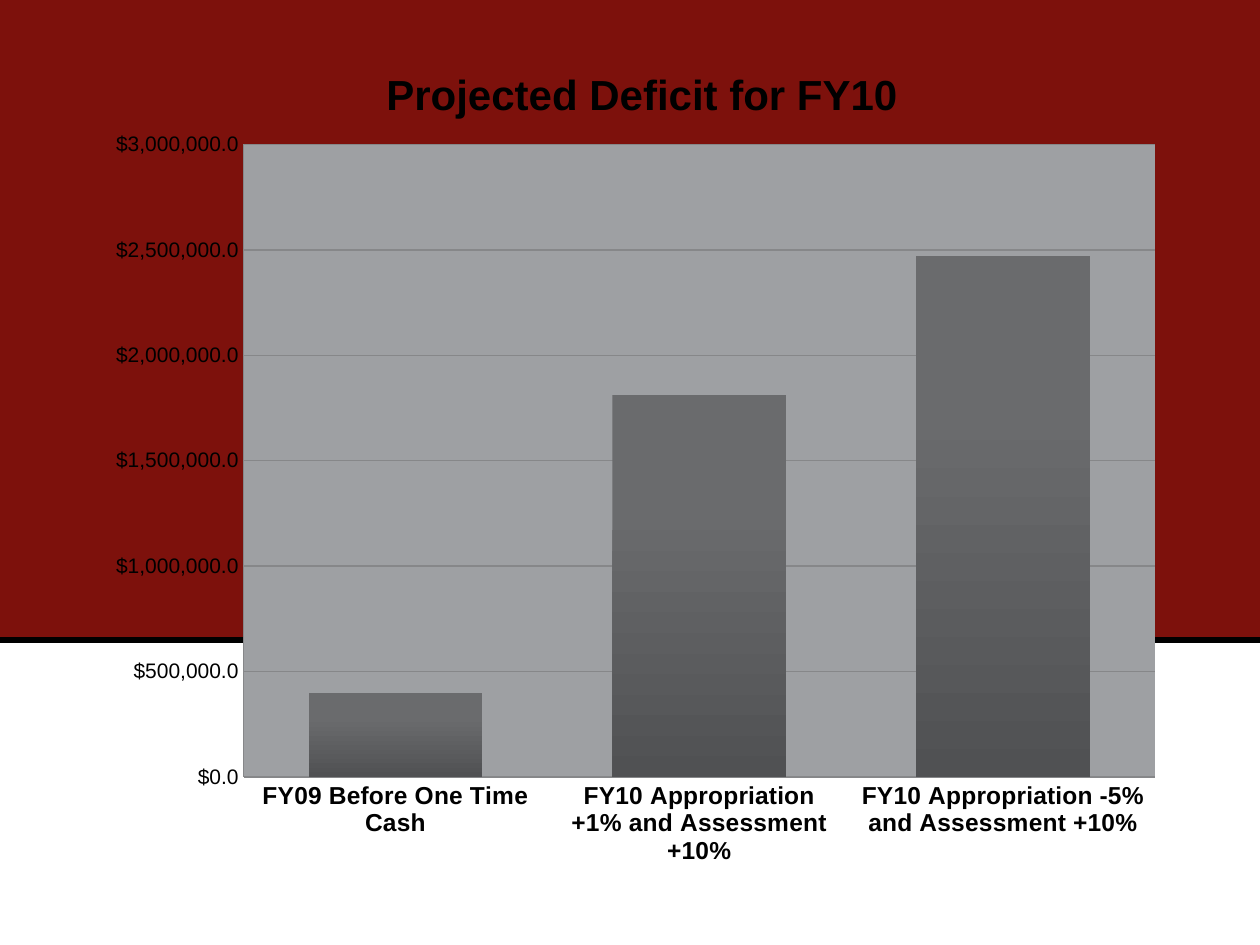
from lxml import etree
from pptx import Presentation, util as u
from pptx.chart.data import CategoryChartData
from pptx.dml.color import RGBColor
from pptx.enum import chart as ch, shapes
from pptx.oxml import parse_xml
from pptx.oxml.ns import nsdecls, qn

RED = RGBColor(0x7D, 0x11, 0x0C)
BLACK = RGBColor(0, 0, 0)
PLOT = RGBColor(0x9E, 0xA0, 0xA3)
GRID = RGBColor(0x86, 0x87, 0x89)
LIGHT = RGBColor(0x6A, 0x6B, 0x6D)
DARK = RGBColor(0x50, 0x51, 0x53)
FONT = "Arial"


def place(node, at, index, inner=False):
    """Give a chart part a fixed layout, as shares of the chart."""
    for old in node.findall(qn("c:layout")):
        node.remove(old)
    tags = [("layoutTarget", "inner")] if inner else []
    tags += [("xMode", "edge"), ("yMode", "edge"), *zip("xywh", at)]
    body = "".join(f'<c:{tag} val="{val}"/>' for tag, val in tags)
    node.insert(index, parse_xml(
        f'<c:layout {nsdecls("c")}><c:manualLayout>{body}</c:manualLayout></c:layout>'))


class Deck:
    def __init__(self, wide, high):
        self.prs = Presentation()
        self.prs.slide_width, self.prs.slide_height = u.Inches(wide), u.Inches(high)
        self.slide = self.prs.slides.add_slide(self.prs.slide_layouts[6])

    def span(self, x, y, w, h):
        """Turn shares of the slide into lengths."""
        wide, high = self.prs.slide_width, self.prs.slide_height
        return [round(v) for v in (x * wide, y * high, w * wide, h * high)]

    def style(self, font, size, bold=False):
        font.name, font.size, font.bold = FONT, u.Pt(size), bold
        font.color.rgb = BLACK

    def band(self, at, color):
        box = self.slide.shapes.add_shape(shapes.MSO_SHAPE.RECTANGLE, *self.span(*at))
        box.shadow.inherit = False
        box.fill.solid()
        box.fill.fore_color.rgb = color
        box.line.fill.background()

    def rule(self, y, color, width):
        x, top, w, _ = self.span(0, y, 1, 0)
        line = self.slide.shapes.add_connector(
            shapes.MSO_CONNECTOR.STRAIGHT, x, top, x + w, top)
        line.line.color.rgb, line.line.width = color, u.Pt(width)
        etree.SubElement(line._element.spPr, qn("a:effectLst"))

    def bars(self, at, title, rows):
        data = CategoryChartData(number_format='"$"#,##0.0')
        data.categories = list(rows)
        data.add_series("Series 1", rows.values())
        chart = self.slide.shapes.add_chart(
            ch.XL_CHART_TYPE.COLUMN_CLUSTERED, *self.span(*at), data).chart
        self.style(chart.font, 10)
        chart.has_legend = False
        self.head(chart, title)
        self.axes(chart)
        plot = chart.plots[0]
        plot.gap_width, plot.overlap, plot.vary_by_categories = 75, -25, False
        self.shade(plot.series[0].format.fill)
        area = chart._chartSpace.chart.plotArea
        place(area, (0.138, 0.143, 0.843, 0.735), 0, inner=True)
        area.append(parse_xml(
            f'<c:spPr {nsdecls("c", "a")}><a:solidFill><a:srgbClr val="{PLOT}"/>'
            '</a:solidFill><a:ln><a:noFill/></a:ln></c:spPr>'))

    def head(self, chart, title):
        chart.has_title = True
        run = chart.chart_title.text_frame.paragraphs[0].add_run()
        run.text = title
        self.style(run.font, 24, True)
        place(chart.chart_title._element, (0.263, 0.045), 1)

    def axes(self, chart):
        for axis, size, bold in ((chart.category_axis, 14, True),
                                 (chart.value_axis, 12, False)):
            axis.major_tick_mark = axis.minor_tick_mark = ch.XL_TICK_MARK.NONE
            self.style(axis.tick_labels.font, size, bold)
            axis.format.line.color.rgb = GRID
        axis = chart.value_axis
        axis.minimum_scale, axis.maximum_scale, axis.major_unit = 0, 3000000, 500000
        axis.tick_labels.number_format = '"$"#,##0.0'
        axis.tick_labels.number_format_is_linked = False
        axis.has_major_gridlines = True
        axis.major_gridlines.format.line.color.rgb = GRID

    def shade(self, fill):
        fill.gradient()
        fill.gradient_angle = 270
        for stop, color, spot in zip(fill.gradient_stops, (LIGHT, DARK), (0.3, 1)):
            stop.color.rgb, stop.position = color, spot


def main():
    deck = Deck(10, 7.5)
    split = 5.08 / 7.5
    deck.band((0, 0, 1, split), RED)
    deck.rule(split, BLACK, 3.75)
    deck.bars((0.075, 0.17 / 7.5, 0.858, 6.83 / 7.5), "Projected Deficit for FY10", {
        "FY09 Before One Time Cash": 400000,
        "FY10 Appropriation +1% and Assessment +10%": 1810000,
        "FY10 Appropriation -5% and Assessment +10%": 2470000,
    })
    deck.prs.save("out.pptx")


if __name__ == "__main__":
    main()
